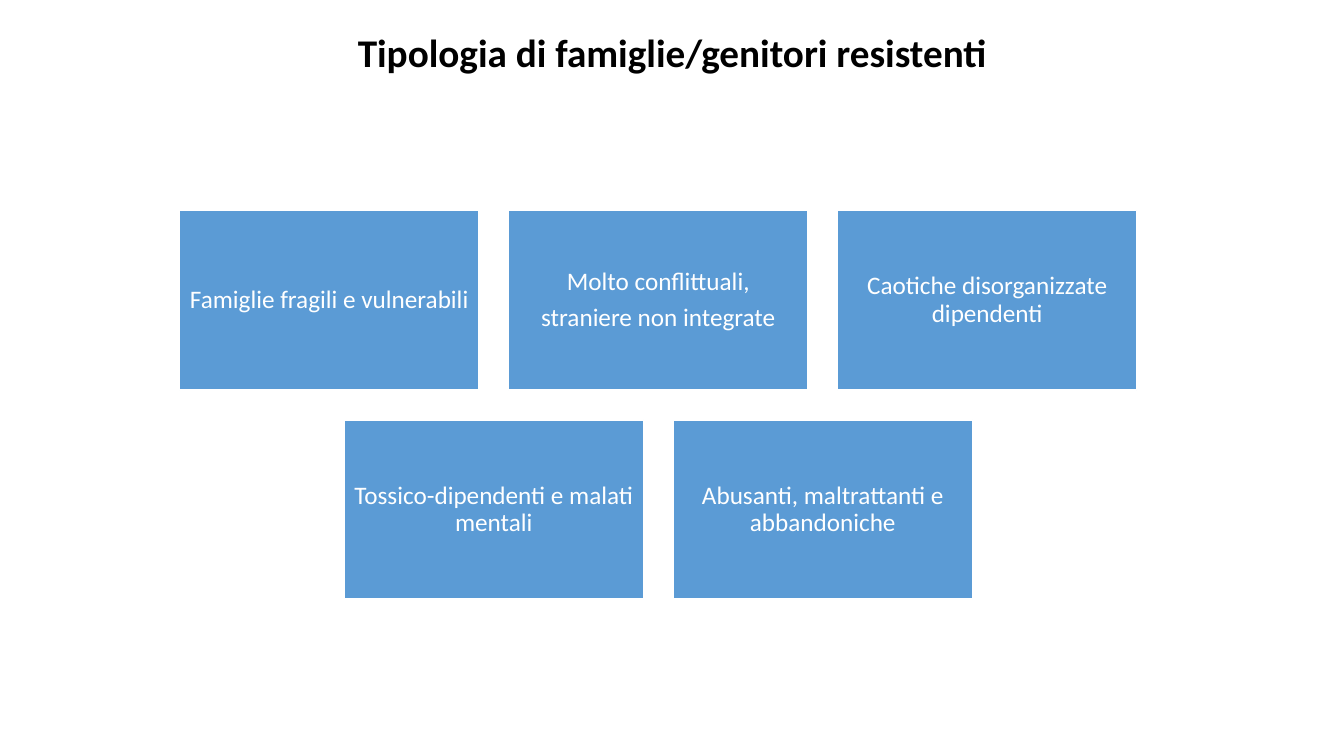
from dataclasses import dataclass

from pptx import Presentation
from pptx.dml.color import RGBColor
from pptx.enum.shapes import MSO_SHAPE
from pptx.enum.text import MSO_ANCHOR, MSO_AUTO_SIZE, PP_ALIGN
from pptx.util import Cm, Pt


@dataclass(frozen=True)
class Theme:
    font: str = "Calibri"
    title_color: RGBColor = RGBColor(0x00, 0x00, 0x00)
    card_fill: RGBColor = RGBColor(0x5B, 0x9B, 0xD5)
    card_text: RGBColor = RGBColor(0xFF, 0xFF, 0xFF)
    title_size: int = 28
    card_size: int = 18


THEME = Theme()
TITLE = "Tipologia di famiglie/genitori resistenti"
FAMILY_ROWS = [
    [
        ["Famiglie fragili e vulnerabili"],
        ["Molto conflittuali,", "straniere non integrate"],
        ["Caotiche disorganizzate dipendenti"],
    ],
    [
        ["Tossico-dipendenti e malati mentali"],
        ["Abusanti, maltrattanti e abbandoniche"],
    ],
]


def write_text(frame, lines, *, size, color, bold=False, inset=0.25, space_after=0):
    frame.word_wrap = True
    frame.auto_size = MSO_AUTO_SIZE.NONE
    frame.vertical_anchor = MSO_ANCHOR.MIDDLE
    frame.margin_left = frame.margin_right = Cm(inset)
    frame.margin_top = frame.margin_bottom = Cm(min(inset, 0.18))
    for index, line in enumerate(lines):
        paragraph = frame.add_paragraph() if index else frame.paragraphs[0]
        paragraph.alignment = PP_ALIGN.CENTER
        paragraph.line_spacing = 0.9
        paragraph.space_before = Pt(0)
        paragraph.space_after = Pt(space_after)
        run = paragraph.add_run()
        run.text = line
        run.font.name = THEME.font
        run.font.size = Pt(size)
        run.font.bold = bold
        run.font.color.rgb = color


def place_title(slide, left, top, width, height):
    title = slide.shapes.title
    title.left, title.top = Cm(left), Cm(top)
    title.width, title.height = Cm(width), Cm(height)
    write_text(title.text_frame, [TITLE], size=THEME.title_size,
               color=THEME.title_color, bold=True)


def add_family_card(slide, lines, left, top, width, height):
    card = slide.shapes.add_shape(
        MSO_SHAPE.RECTANGLE, Cm(left), Cm(top), Cm(width), Cm(height))
    card.shadow.inherit = False
    card.fill.solid()
    card.fill.fore_color.rgb = THEME.card_fill
    card.line.color.rgb = THEME.card_text
    card.line.width = Pt(1)
    write_text(card.text_frame, lines, size=THEME.card_size,
               color=THEME.card_text, inset=0.18, space_after=6.3)


def add_family_grid(slide, left, top, width, height, gap=0.75):
    columns = max(len(row) for row in FAMILY_ROWS)
    card_width = (width - gap * (columns - 1)) / columns
    card_height = (height - gap * (len(FAMILY_ROWS) - 1)) / len(FAMILY_ROWS)
    for row_index, row in enumerate(FAMILY_ROWS):
        row_left = left + (columns - len(row)) * (card_width + gap) / 2
        row_top = top + row_index * (card_height + gap)
        for column, lines in enumerate(row):
            add_family_card(slide, lines, row_left + column * (card_width + gap),
                            row_top, card_width, card_height)


def main():
    presentation = Presentation()
    presentation.slide_width, presentation.slide_height = Cm(33.87), Cm(19.05)
    slide = presentation.slides.add_slide(
        presentation.slide_layouts.get_by_name("Title Only"))
    place_title(slide, 2.33, 0.63, 29.21, 1.5)
    add_family_grid(slide, 4.53, 5.31, 24.12, 9.79)
    presentation.save("out.pptx")


if __name__ == "__main__":
    main()
